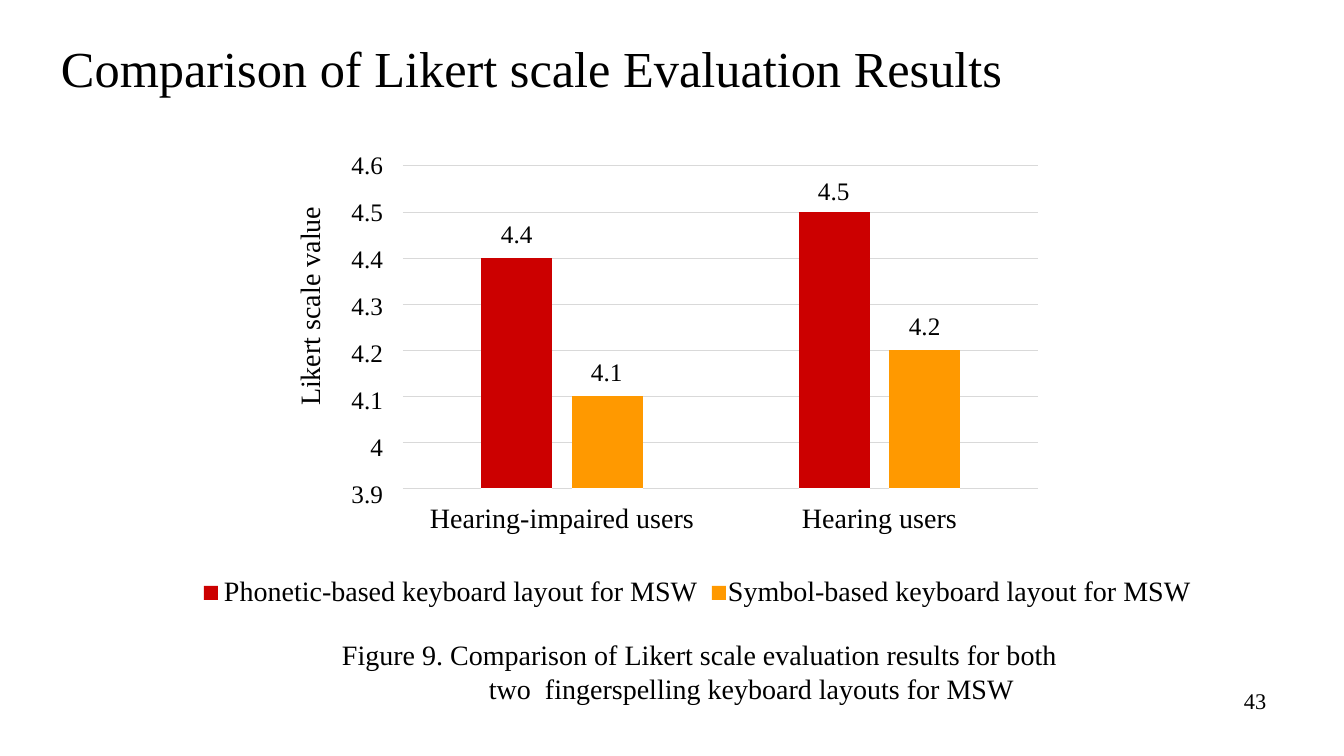
import pptx
import pptx.dml.color
import pptx.enum.shapes
import pptx.enum.text
import pptx.oxml
import pptx.oxml.ns
import pptx.util

FONT = "Times New Roman"
BLACK, GRID, RED, ORANGE = "000000", "D9D9D9", "CC0000", "FF9900"
LEFT, RIGHT = pptx.enum.text.PP_ALIGN.LEFT, pptx.enum.text.PP_ALIGN.RIGHT

# Plot grid: each row is one step of 0.1 on the scale
COLUMNS = (78, 71, 20, 71, 156, 71, 19, 71, 78)
ROWS, ROW_HEIGHT = 6, 46
PLOT_LEFT, PLOT_TOP, PLOT_RIGHT = 403, 212, 1038
BARS = [(1, 1, RED), (3, 4, ORANGE), (5, 0, RED), (7, 3, ORANGE)]  # column, top row, fill
LABEL_SPANS = [  # row, first column, last column, label, indent
    (0, 0, 4, "4.4", 98), (0, 6, 8, "", 0),
    (1, 2, 4, "", 0), (1, 6, 8, "", 0),
    (2, 2, 4, "", 0), (2, 6, 8, "4.2", 39),
    (3, 2, 4, "4.1", 39),
]
SCALE = ["4.6", "4.5", "4.4", "4.3", "4.2", "4.1", "4", "3.9"]


def px(length):
    return pptx.util.Emu(round(length * 914400 / 100.8))


def colour(hex_string):
    return pptx.dml.color.RGBColor.from_string(hex_string)


def set_all(target, values):
    for name, value in values.items():
        setattr(target, name, value)


def fill_para(para, text, size, align=LEFT, before=0, margin=0, indent=0, tab=0):
    """Write one paragraph; margin, indent and tab are in px, before in points."""
    para.text = text
    set_all(para, {"alignment": align, "space_before": pptx.util.Pt(before)})
    properties = para._p.get_or_add_pPr()
    properties.set("marL", str(px(margin)))
    properties.set("indent", str(px(indent)))
    if tab:
        properties.append(pptx.oxml.parse_xml(
            f'<a:tabLst {pptx.oxml.ns.nsdecls("a")}>'
            f'<a:tab pos="{px(tab)}" algn="l"/></a:tabLst>'))
    for span in para.runs:
        set_all(span.font, {"name": FONT, "size": pptx.util.Pt(size), "bold": False})
        span.font.color.rgb = colour(BLACK)


def prepare_frame(shape, box):
    """Move a text shape to its box and clear its margins."""
    set_all(shape, dict(zip(("left", "top", "width", "height"), map(px, box))))
    set_all(shape.text_frame, {
        "word_wrap": True,
        "auto_size": pptx.enum.text.MSO_AUTO_SIZE.NONE,
        "vertical_anchor": pptx.enum.text.MSO_ANCHOR.TOP,
        "margin_left": 0, "margin_top": 0, "margin_right": 0, "margin_bottom": 0,
    })
    return shape.text_frame


def add_text(page, box, text, size):
    frame = prepare_frame(page.shapes.add_textbox(0, 0, 0, 0), box)
    fill_para(frame.paragraphs[0], text, size)
    return frame


def add_scale(page):
    frame = prepare_frame(page.shapes.add_textbox(0, 0, 0, 0), (349, 149, 34, 350))
    for number, text in enumerate(SCALE):
        para = frame.add_paragraph() if number else frame.paragraphs[0]
        fill_para(para, text, 18, align=RIGHT, before=12 if number else 0)


def add_top_line(page):
    line = page.shapes.add_connector(
        pptx.enum.shapes.MSO_CONNECTOR.STRAIGHT,
        *map(px, (PLOT_LEFT, 166, PLOT_RIGHT, 166)))
    line.line.color.rgb = colour(GRID)
    line.line.width = pptx.util.Pt(0.75)
    line._element.spPr.append(
        pptx.oxml.parse_xml(f'<a:effectLst {pptx.oxml.ns.nsdecls("a")}/>'))


def format_cell(cell, fill=None):
    """Colour a bar cell, or rule a blank cell above and below."""
    set_all(cell, {"margin_left": 0, "margin_right": 0,
                   "margin_top": px(9), "margin_bottom": 0})
    if fill:
        cell.fill.solid()
        cell.fill.fore_color.rgb = colour(fill)
    else:
        cell.fill.background()
    properties = cell._tc.get_or_add_tcPr()
    for index, side in enumerate("LRTB"):
        paint = "<a:noFill/>"
        if side in "TB" and not fill:
            paint = f'<a:solidFill><a:srgbClr val="{GRID}"/></a:solidFill>'
        properties.insert(index, pptx.oxml.parse_xml(
            f'<a:ln{side} {pptx.oxml.ns.nsdecls("a")} w="9525">{paint}</a:ln{side}>'))


def add_plot(page):
    table = page.shapes.add_table(
        ROWS, len(COLUMNS), px(PLOT_LEFT), px(PLOT_TOP),
        px(sum(COLUMNS)), px(ROWS * ROW_HEIGHT)).table
    set_all(table, {"first_row": False, "horz_banding": False})
    for column, width in zip(table.columns, COLUMNS):
        column.width = px(width)
    for row in table.rows:
        row.height = px(ROW_HEIGHT)

    # Fills and rules
    fills = {(row, column): fill for column, top, fill in BARS for row in range(top, ROWS)}
    for row in range(ROWS):
        for column in range(len(COLUMNS)):
            format_cell(table.cell(row, column), fills.get((row, column)))

    # Bars and the labels above them
    for column, top, _ in BARS:
        table.cell(top, column).merge(table.cell(ROWS - 1, column))
    for row, first, last, label, indent in LABEL_SPANS:
        cell = table.cell(row, first)
        cell.merge(table.cell(row, last))
        if label:
            fill_para(cell.text_frame.paragraphs[0], label, 18, margin=indent)


def add_legend_key(page, left, fill):
    key = page.shapes.add_shape(
        pptx.enum.shapes.MSO_SHAPE.RECTANGLE, *map(px, (left, 586, 14, 14)))
    key.shadow.inherit = False
    key.fill.solid()
    key.fill.fore_color.rgb = colour(fill)
    key.line.fill.background()


def add_legend_and_caption(page):
    for left, fill in ((204, RED), (712, ORANGE)):
        add_legend_key(page, left, fill)
    frame = prepare_frame(page.shapes.add_textbox(0, 0, 0, 0), (224, 573, 980, 131))
    fill_para(frame.paragraphs[0],
              "Phonetic-based keyboard layout for MSW\t"
              "Symbol-based keyboard layout for MSW", 20, tab=510)
    fill_para(frame.add_paragraph(),
              "Figure 9. Comparison of Likert scale evaluation results for both\v"
              "two  fingerspelling keyboard layouts for MSW",
              20, before=22, margin=265, indent=-147)


def main():
    deck = pptx.Presentation()
    deck.slide_width, deck.slide_height = px(1344), px(756)
    page = deck.slides.add_slide(deck.slide_layouts[5])
    title = prepare_frame(page.shapes.title, (61, 37, 950, 64))
    fill_para(title.paragraphs[0], "Comparison of Likert scale Evaluation Results", 36)

    # Bar plot with its scale and labels
    add_top_line(page)
    add_text(page, (818, 175, 36, 33), "4.5", 18)
    add_plot(page)
    add_scale(page)
    add_text(page, (430, 500, 270, 36), "Hearing-impaired users", 20)
    add_text(page, (802, 500, 160, 36), "Hearing users", 20)
    axis_title = add_text(page, (292, 202, 34, 204), "Likert scale value", 20)
    axis_title._txBody.bodyPr.set("vert", "vert270")

    add_legend_and_caption(page)
    add_text(page, (1244, 687, 30, 28), "43", 16)
    deck.save("out.pptx")


if __name__ == "__main__":
    main()
